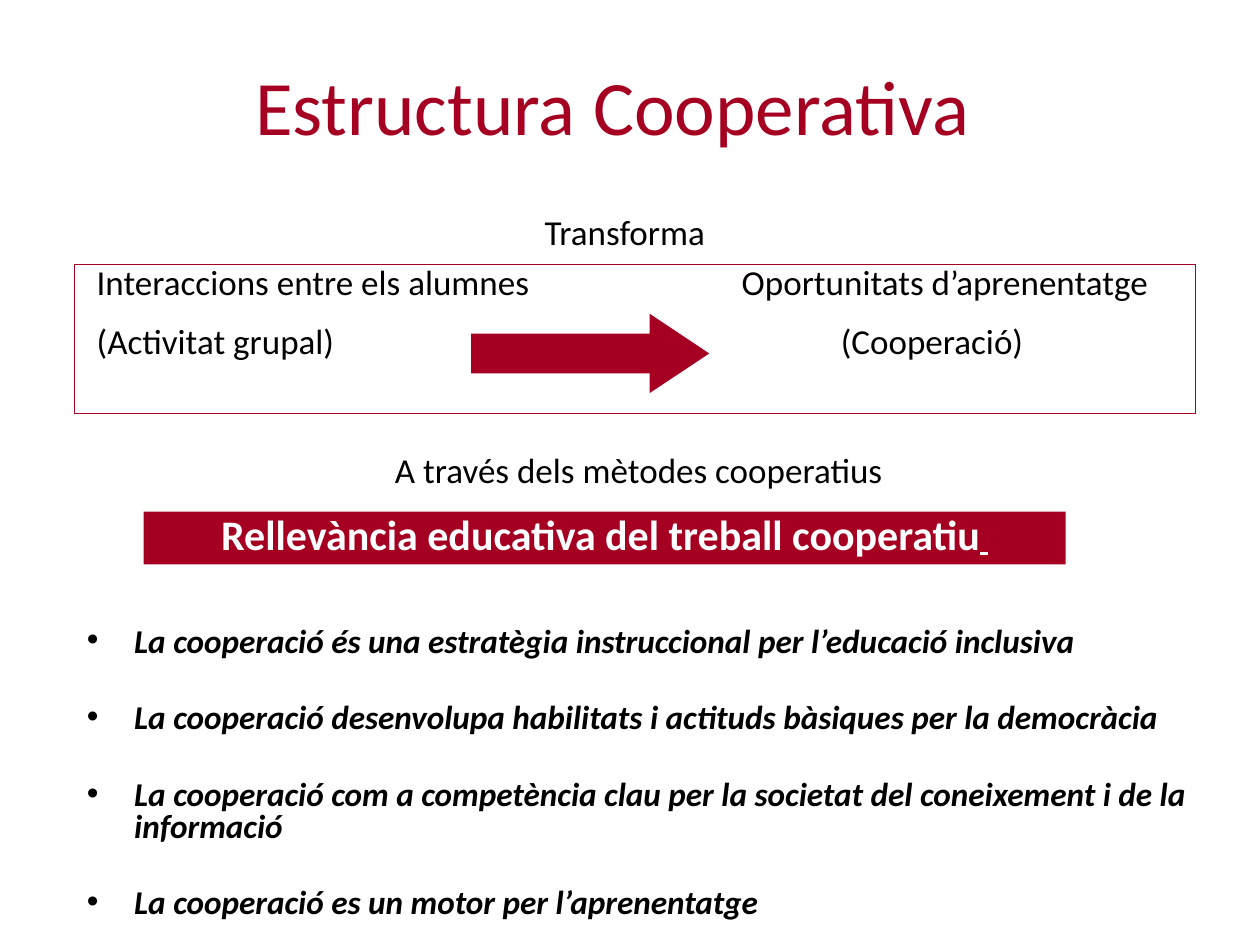
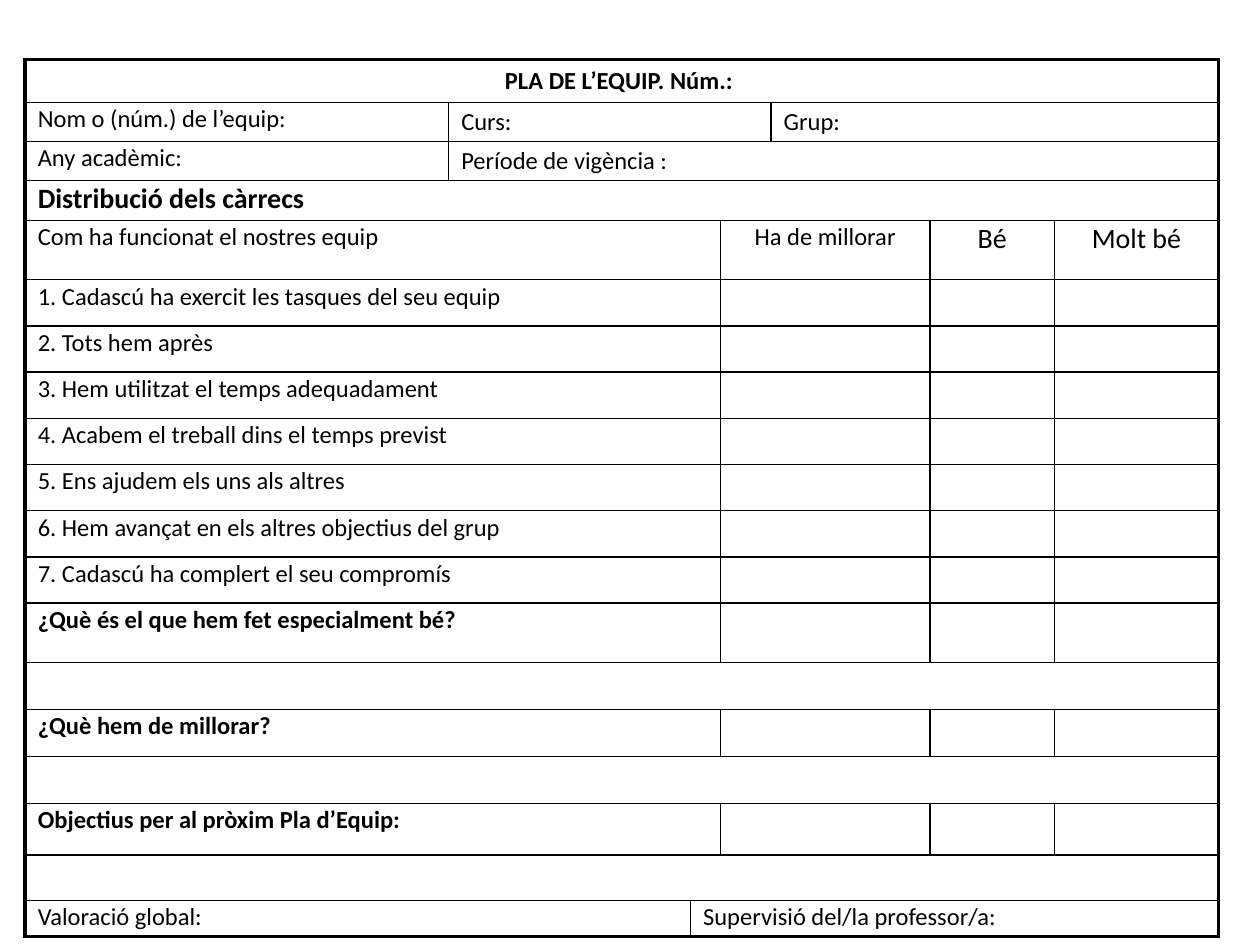
from dataclasses import dataclass

from lxml.etree import SubElement
from pptx import Presentation
from pptx.dml.color import RGBColor
from pptx.enum.shapes import MSO_SHAPE as Shape
from pptx.enum.text import MSO_ANCHOR as Anchor, MSO_AUTO_SIZE as AutoSize, PP_ALIGN as Align
from pptx.oxml.ns import qn
from pptx.util import Pt


@dataclass(frozen=True)
class Theme:
    font: str = "Calibri"
    crimson: RGBColor = RGBColor(0xA5, 0x00, 0x21)
    black: RGBColor = RGBColor(0, 0, 0)
    white: RGBColor = RGBColor(255, 255, 255)
    title: float = 44
    banner: float = 24
    text: float = 20
    bullet: float = 19
    heading: float = 16
    cell: float = 14
    outer_border: float = 2.25
    inner_border: float = 1


THEME = Theme()

TITLE = "Estructura Cooperativa "
BANNER = "Rellevància educativa del treball cooperatiu"
BULLETS = [
    "La cooperació és una estratègia instruccional per l’educació inclusiva",
    "La cooperació desenvolupa habilitats i actituds bàsiques per la democràcia",
    "La cooperació com a competència clau per la societat del coneixement i de la informació",
    "La cooperació es un motor per l’aprenentatge",
]
# Left text, right text, tab position of the right text
TRANSFORMATION = [
    ("Interaccions entre els alumnes", "Oportunitats d’aprenentatge", 368.6),
    ("(Activitat grupal)", "(Cooperació)", 425.2),
]
# Text, (left, top, width, height)
CAPTIONS = [
    ("Transforma", (287, 116.6, 140, 31)),
    ("A través dels mètodes cooperatius", (61.5, 252.7, 607, 31)),
]

QUESTIONS = [
    "Cadascú ha exercit les tasques del seu equip",
    "Tots hem après",
    "Hem utilitzat el temps adequadament",
    "Acabem el treball dins el temps previst",
    "Ens ajudem els uns als altres",
    "Hem avançat en els altres objectius del grup",
    "Cadascú ha complert el seu compromís",
]

# Cell formats: only what differs from plain 14 pt text
CENTRED = {"align": Align.CENTER}
BOLD = {"bold": True}
RATING = {"align": Align.CENTER, "size": THEME.heading}
LOOSE = {"spacing": 0.9}

COLUMN_WIDTHS = [242, 138.2, 15.8, 28.8, 90.7, 71.3, 93.6]


def rating_row(height, label, **cell_format):
    return height, [(3, label, cell_format), (2, "", {}), (1, "", {}), (1, "", {})]


def answer_row(height):
    return height, [(7, "", {})]


# Row height, then cells as (columns spanned, text, format)
PLAN_ROWS = [
    (24.5, [(7, "PLA DE L’EQUIP. Núm.: ", {"bold": True, "spacing": 1, **CENTRED})]),
    (22.4, [(1, "Nom o (núm.) de l’equip:", {}), (3, "Curs:", LOOSE), (3, "Grup:", LOOSE)]),
    (22.4, [(1, "Any acadèmic:", {}), (6, "Període de vigència :", LOOSE)]),
    (22.4, [(7, "Distribució dels càrrecs", {"bold": True, "size": THEME.heading})]),
    (34, [(3, "Com ha funcionat el nostres equip", {}), (2, "Ha de millorar", CENTRED),
          (1, "Bé", RATING), (1, "Molt bé", RATING)]),
    *[rating_row(26.4, f"{number}. {question}") for number, question in enumerate(QUESTIONS, 1)],
    rating_row(34, "¿Què és el que hem fet especialment bé?", **BOLD),
    answer_row(26.9),
    rating_row(26.9, "¿Què hem de millorar?", **BOLD),
    answer_row(26.9),
    rating_row(29.3, "Objectius per al pròxim Pla d’Equip:", **BOLD),
    answer_row(26),
    (20.8, [(2, "Valoració global:", {}), (5, "Supervisió del/la professor/a:", {})]),
]


def place(shape, left, top, width, height):
    shape.left, shape.top, shape.width, shape.height = map(Pt, (left, top, width, height))


def format_runs(paragraph, size, color=THEME.black, bold=False, italic=False):
    for run in paragraph.runs:
        font = run.font
        font.name, font.size, font.bold, font.italic = THEME.font, Pt(size), bold, italic
        font.color.rgb = color


def add_filled_shape(slide, kind, box):
    shape = slide.shapes.add_shape(kind, *map(Pt, box))
    shape.shadow.inherit = False
    shape.fill.solid()
    shape.fill.fore_color.rgb = THEME.crimson
    shape.line.fill.background()
    return shape


def add_text_frame(slide, box):
    text_frame = slide.shapes.add_textbox(*map(Pt, box)).text_frame
    text_frame.word_wrap = True
    return text_frame


def set_hanging_bullet(paragraph, indent):
    properties = paragraph._p.get_or_add_pPr()
    properties.set("marL", str(Pt(indent)))
    properties.set("indent", str(-Pt(indent)))
    SubElement(properties, qn("a:buChar")).set("char", "•")


def set_tab_stop(paragraph, position):
    tabs = SubElement(paragraph._p.get_or_add_pPr(), qn("a:tabLst"))
    tab = SubElement(tabs, qn("a:tab"))
    tab.set("pos", str(Pt(position)))
    tab.set("algn", "l")


def add_bullets(placeholder):
    place(placeholder, 42.5, 355, 648, 180)
    text_frame = placeholder.text_frame
    text_frame.text = "\n".join(BULLETS)
    text_frame.auto_size = AutoSize.NONE
    for index, paragraph in enumerate(text_frame.paragraphs):
        set_hanging_bullet(paragraph, 27)
        paragraph.line_spacing = 0.8
        paragraph.space_before = Pt(25.5 if index else 0)
        format_runs(paragraph, THEME.bullet, bold=True, italic=True)


def add_banner(slide):
    text_frame = add_filled_shape(slide, Shape.RECTANGLE, (82, 292.3, 527, 30.2)).text_frame
    text_frame.text = BANNER
    text_frame.vertical_anchor = Anchor.MIDDLE
    paragraph = text_frame.paragraphs[0]
    paragraph.alignment, paragraph.line_spacing = Align.CENTER, 0.8
    underlined = paragraph.add_run()
    underlined.text = " "
    format_runs(paragraph, THEME.banner, THEME.white, bold=True)
    underlined.font.size, underlined.font.underline = Pt(THEME.text), True


def add_transformation(slide):
    text_frame = add_text_frame(slide, (48.2, 145.4, 623.5, 103))
    text_frame.text = "\n".join(f"{before}\t{after}" for before, after, _ in TRANSFORMATION)
    for index, (paragraph, row) in enumerate(zip(text_frame.paragraphs, TRANSFORMATION)):
        set_tab_stop(paragraph, row[2])
        paragraph.space_before = Pt(9.5 if index else 0)
        format_runs(paragraph, THEME.text)

    frame = add_filled_shape(slide, Shape.RECTANGLE, (42.5, 151.2, 640.8, 85))
    frame.fill.background()
    frame.line.color.rgb = THEME.crimson
    frame.line.width = Pt(0.75)
    arrow = add_filled_shape(slide, Shape.RIGHT_ARROW, (269.3, 179.3, 136, 45.4))
    arrow.adjustments[0], arrow.adjustments[1] = 0.5, 0.75


def build_structure_slide(presentation):
    slide = presentation.slides.add_slide(presentation.slide_layouts[1])
    title, body = slide.placeholders
    place(title, 31, 0, 648, 90)
    title.text_frame.text = TITLE
    title.text_frame.vertical_anchor = Anchor.BOTTOM
    title.text_frame.paragraphs[0].alignment = Align.CENTER
    format_runs(title.text_frame.paragraphs[0], THEME.title, THEME.crimson)
    add_bullets(body)
    add_banner(slide)
    add_transformation(slide)
    for text, box in CAPTIONS:
        text_frame = add_text_frame(slide, box)
        text_frame.text = text
        text_frame.paragraphs[0].alignment = Align.CENTER
        format_runs(text_frame.paragraphs[0], THEME.text)


def set_borders(cell, outer_sides):
    """Draw all four sides, heavier where the cell meets the table's edge."""
    properties = cell._tc.get_or_add_tcPr()
    for index, side in enumerate("LRTB"):
        width = THEME.outer_border if side in outer_sides else THEME.inner_border
        line = properties.makeelement(qn(f"a:ln{side}"), {"w": str(Pt(width))})
        fill = SubElement(line, qn("a:solidFill"))
        SubElement(fill, qn("a:srgbClr")).set("val", str(THEME.black))
        properties.insert(index, line)


def fill_cell(cell, text, size=THEME.cell, bold=False, align=Align.LEFT, spacing=0.8):
    cell.text_frame.text = text
    paragraph = cell.text_frame.paragraphs[0]
    paragraph.alignment, paragraph.line_spacing = align, spacing
    format_runs(paragraph, size, bold=bold)


def build_team_plan_slide(presentation):
    slide = presentation.slides.add_slide(presentation.slide_layouts[6])
    heights = [height for height, _ in PLAN_ROWS]
    last_row, column_count = len(heights) - 1, len(COLUMN_WIDTHS)
    box = (14.4, 34, sum(COLUMN_WIDTHS), sum(heights))
    table = slide.shapes.add_table(len(heights), column_count, *map(Pt, box)).table
    table.first_row = table.horz_banding = False
    for column, width in zip(table.columns, COLUMN_WIDTHS):
        column.width = Pt(width)
    for row, height in zip(table.rows, heights):
        row.height = Pt(height)
    for cell in table.iter_cells():
        cell.fill.solid()
        cell.fill.fore_color.rgb = THEME.white
        cell.margin_top = cell.margin_bottom = 0

    for row_index, (_, cells) in enumerate(PLAN_ROWS):
        start = 0
        for span, text, cell_format in cells:
            end = start + span
            cell = table.cell(row_index, start)
            if span > 1:
                cell.merge(table.cell(row_index, end - 1))
            if text:
                cell.margin_top = cell.margin_bottom = Pt(3.6)
                fill_cell(cell, text, **cell_format)
            edges = {"L": start == 0, "R": end == column_count,
                     "T": row_index == 0, "B": row_index == last_row}
            set_borders(cell, [side for side, outer in edges.items() if outer])
            start = end


def main():
    presentation = Presentation()
    presentation.slide_width, presentation.slide_height = Pt(720), Pt(540)
    build_structure_slide(presentation)
    build_team_plan_slide(presentation)
    presentation.save("out.pptx")


if __name__ == "__main__":
    main()
